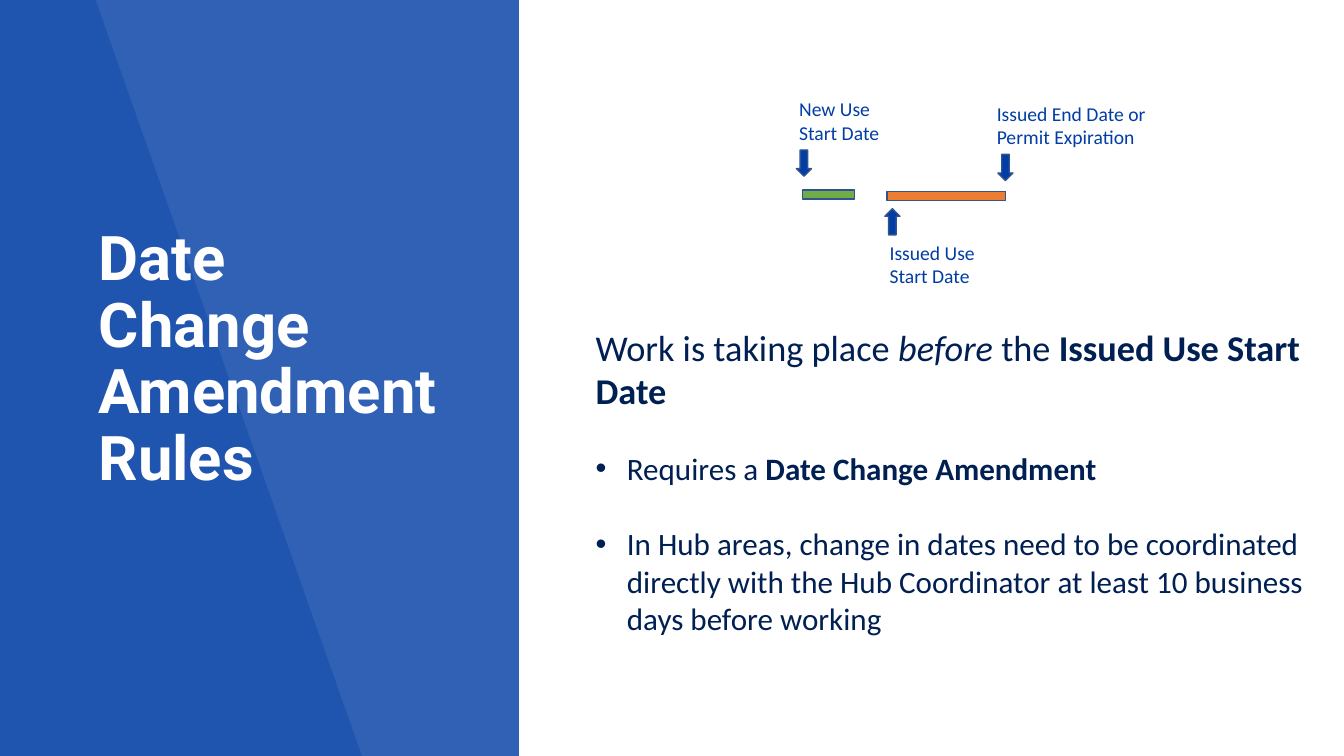
from lxml import etree
from pptx import Presentation
from pptx.dml.color import RGBColor
from pptx.enum.shapes import MSO_SHAPE as Shape
from pptx.enum.text import MSO_ANCHOR as Anchor
from pptx.oxml.ns import qn
from pptx.util import Cm, Pt

BLUE = RGBColor(0x00, 0x3D, 0xA5)
NAVY = RGBColor(0x00, 0x1F, 0x52)
EDGE = RGBColor(0x31, 0x53, 0x8F)
GREEN = RGBColor(0x70, 0xAD, 0x47)
ORANGE = RGBColor(0xED, 0x7D, 0x31)
WHITE = RGBColor(0xFF, 0xFF, 0xFF)
WIDE, HIGH = 33.87, 19.05


def paint(shape, color, edge=None, alpha=None):
    """Fill a shape, with an optional outline and an opacity in percent."""
    shape.shadow.inherit = False
    shape.fill.solid()
    shape.fill.fore_color.rgb = color
    if edge is None:
        shape.line.fill.background()
    else:
        shape.line.color.rgb = edge
        shape.line.width = Pt(1)
    if alpha is not None:
        tone = shape.fill._xPr.find(qn("a:solidFill"))[0]
        etree.SubElement(tone, qn("a:alpha"), val=str(alpha * 1000))


def add_box(slide, left, top, width, height, anchor=Anchor.TOP):
    box = slide.shapes.add_textbox(Cm(left), Cm(top), Cm(width), Cm(height))
    frame = box.text_frame
    frame.word_wrap = True
    frame.vertical_anchor = anchor
    return frame


def style(font, name, size, color, bold=None):
    font.name = name
    font.size = Pt(size)
    font.color.rgb = color
    font.bold = bold


def add_panel(slide, left, top, width, height):
    """Blue side panel with a slanted darker band and the title."""
    panel = slide.shapes.add_shape(
        Shape.RECTANGLE, Cm(left), Cm(top), Cm(width), Cm(height))
    paint(panel, BLUE, alpha=81)

    pen = slide.shapes.build_freeform(Cm(left), Cm(top))
    pen.add_line_segments([
        (Cm(left + 2.41), Cm(top)),
        (Cm(left + 9.12), Cm(top + height)),
        (Cm(left), Cm(top + height))])
    paint(pen.convert_to_shape(), BLUE, alpha=35)

    frame = add_box(slide, left + 2.24, top + 1.78, 9.12, 14.6, Anchor.MIDDLE)
    frame.text = "Date Change Amendment Rules"
    title = frame.paragraphs[0]
    title.line_spacing = 0.9
    style(title.font, "Roboto", 44, WHITE, True)


def add_dates(slide, left, top):
    """Timeline of two periods with an arrow and a label for each date."""
    bars = [(0.19, 2.12, 1.78, GREEN), (2.02, 2.15, 4.06, ORANGE)]
    for x, y, width, color in bars:
        bar = slide.shapes.add_shape(
            Shape.MATH_MINUS, Cm(left + x), Cm(top + y), Cm(width), Cm(0.97))
        paint(bar, color, EDGE)

    marks = [
        ("New Use Start Date", Shape.DOWN_ARROW, 0.27, 1.48, 0.09, 3.15),
        ("Issued End Date or Permit Expiration", Shape.DOWN_ARROW,
         5.35, 1.59, 5.07, 4.42),
        ("Issued Use Start Date", Shape.UP_ARROW, 2.5, 2.96, 2.37, 3.38),
    ]
    for text, kind, x, y, start, width in marks:
        arrow = slide.shapes.add_shape(
            kind, Cm(left + x), Cm(top + y), Cm(0.38), Cm(0.66))
        paint(arrow, BLUE, EDGE)
        shift = 0.68 if kind == Shape.UP_ARROW else -1.45
        frame = add_box(slide, left + start, top + y + shift, width, 1.45)
        frame.text = text
        style(frame.paragraphs[0].font, "Calibri", 14, BLUE)


def add_bullet(para):
    props = para._p.get_or_add_pPr()
    props.set("marL", str(Cm(0.79)))
    props.set("indent", str(-Cm(0.79)))
    etree.SubElement(props, qn("a:buFont"), typeface="Arial")
    etree.SubElement(props, qn("a:buChar"), char="•")


def add_rules(slide, left, top, width, height):
    """Lead sentence followed by bulleted rules."""
    rules = [
        [("Work is taking place ", ""), ("before", "i"), (" the ", ""),
         ("Issued Use Start Date", "b")],
        [("Requires a ", ""), ("Date Change Amendment", "b")],
        [("In Hub areas, change in dates need to be coordinated directly "
          "with the Hub Coordinator at least 10 business days before working",
          "")],
    ]
    frame = add_box(slide, left, top, width, height)
    for i, parts in enumerate(rules):
        para = frame.add_paragraph() if i else frame.paragraphs[0]
        if i:
            add_bullet(para)
            para.space_before = Pt(27)
        for text, mark in parts:
            run = para.add_run()
            run.text = text
            style(run.font, "Calibri", 22.2 if i else 25.9, NAVY, mark == "b")
            run.font.italic = mark == "i"


def main():
    deck = Presentation()
    deck.slide_width, deck.slide_height = Cm(WIDE), Cm(HIGH)
    slide = deck.slides.add_slide(deck.slide_layouts[6])
    add_panel(slide, 0, 0, 13.08, HIGH)
    add_rules(slide, 14.76, 8.06, 18.34, 8.6)
    add_dates(slide, 19.8, 2.3)
    deck.save("out.pptx")


if __name__ == "__main__":
    main()
